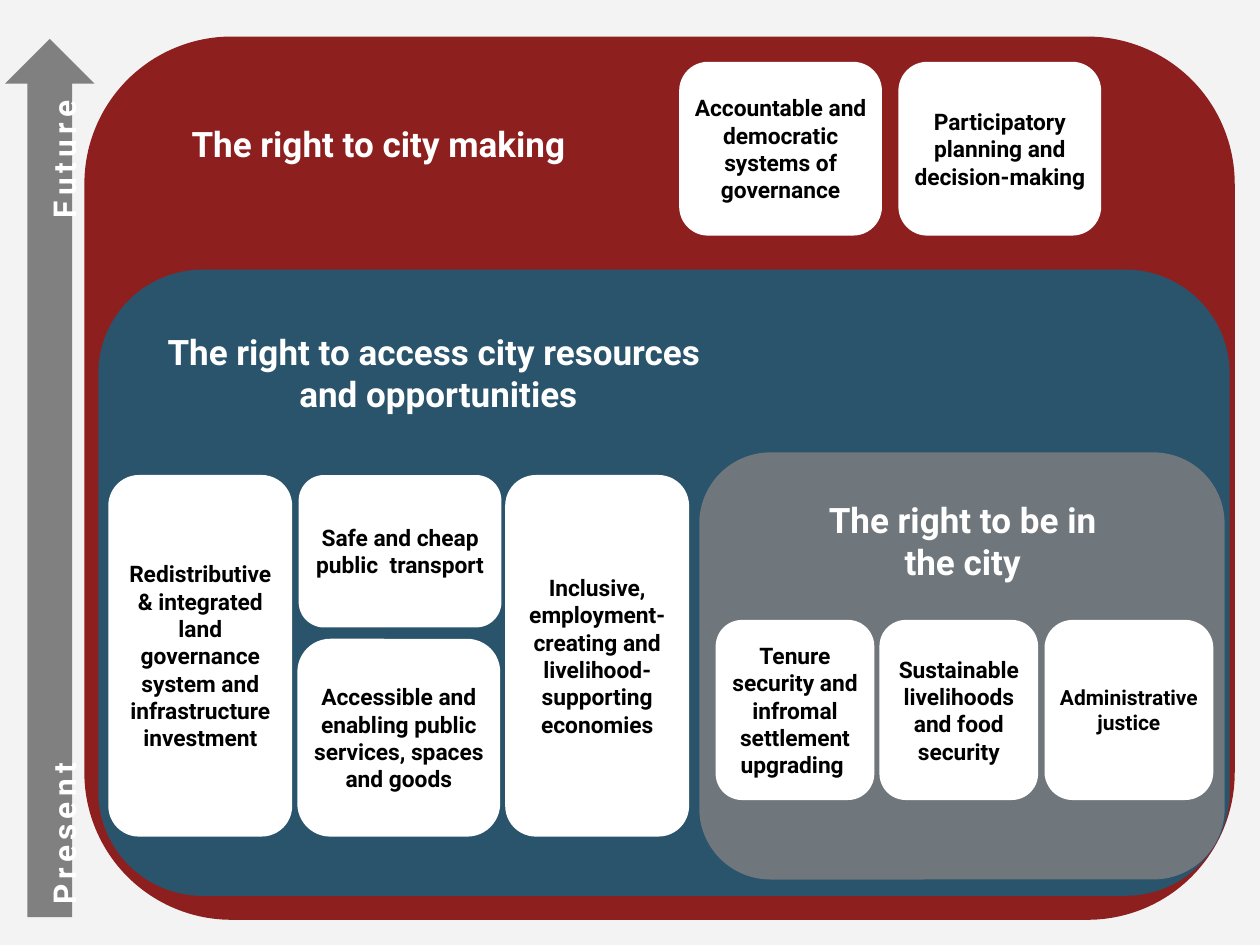
from lxml import etree
from pptx import Presentation
from pptx.dml.color import RGBColor
from pptx.enum.shapes import MSO_SHAPE
from pptx.enum.text import MSO_ANCHOR, PP_ALIGN
from pptx.oxml.ns import qn
from pptx.util import Inches, Pt

WHITE, BLACK, GREY = "FFFFFF", "000000", "808080"
FONT = "Roboto"

# left, top, width, height, colour, opacity in percent
ZONES = [
    (0.67, 0.29, 9.13, 7.01, "800000", 87),
    (0.78, 2.14, 8.98, 4.97, "2A536C", 100),
    (5.55, 3.59, 4.17, 3.39, GREY, 82),
]

MAKING_TOP, ACCESS_TOP, BEING_TOP = 0.49, 3.77, 4.92
# left, top, width, height, text
CARDS = [
    (5.39, MAKING_TOP, 1.61, 1.38, "Accountable and democratic systems of governance"),
    (7.13, MAKING_TOP, 1.61, 1.38, "Participatory planning and decision-making"),
    (0.86, ACCESS_TOP, 1.46, 2.87,
     "Redistributive\v& integrated land governance system and infrastructure investment"),
    (2.37, ACCESS_TOP, 1.61, 1.21, "Safe and cheap public  transport"),
    (2.36, 5.07, 1.61, 1.57, "Accessible and enabling public services, spaces and goods"),
    (4.01, ACCESS_TOP, 1.46, 2.87,
     "Inclusive, employment-creating and livelihood-supporting economies"),
    (5.68, BEING_TOP, 1.26, 1.43, "Tenure security and infromal settlement upgrading "),
    (6.98, BEING_TOP, 1.26, 1.43, "Sustainable livelihoods and food security"),
]
JUSTICE = (8.29, BEING_TOP, 1.34, 1.43, "Administrative justice")

HEADINGS = [
    (1, 2.57, 4.96, 0.77, "The right to access city resources \nand opportunities"),
    (6.38, 3.91, 2.52, 0.77, "The right to be in the city"),
]


def color(value):
    return RGBColor.from_string(value)


def apply(target, formats):
    for name, value in formats.items():
        setattr(target, name, value)


def place(box, left, top, width, height):
    apply(box, {"left": Inches(left), "top": Inches(top),
                "width": Inches(width), "height": Inches(height)})


def write(box, text, size, ink, align=PP_ALIGN.CENTER, anchor=MSO_ANCHOR.MIDDLE,
          side=0.1):
    frame = box.text_frame
    frame.text = text
    apply(frame, {"word_wrap": True, "vertical_anchor": anchor,
                  "margin_left": Inches(side), "margin_right": Inches(side),
                  "margin_top": Inches(0.05), "margin_bottom": Inches(0.05)})
    for para in frame.paragraphs:
        para.alignment = align
        for span in para.runs:
            apply(span.font, {"name": FONT, "size": Pt(size), "bold": True})
            span.font.color.rgb = color(ink)


def add_block(page, kind, bounds, fill, opacity=100):
    block = page.shapes.add_shape(kind, *map(Inches, bounds))
    block.shadow.inherit = False
    block.line.fill.background()
    block.fill.solid()
    block.fill.fore_color.rgb = color(fill)
    if opacity < 100:
        tint = block.fill._xPr.find(".//" + qn("a:srgbClr"))
        etree.SubElement(tint, qn("a:alpha"), val=str(opacity * 1000))
    return block


def add_card(page, *bounds, text, size=13, side=0.04):
    card = add_block(page, MSO_SHAPE.ROUNDED_RECTANGLE, bounds, WHITE)
    write(card, text, size, BLACK, side=side)


def add_heading(page, *bounds, text):
    heading = page.shapes.add_textbox(*map(Inches, bounds))
    write(heading, text, 20, WHITE, anchor=MSO_ANCHOR.TOP)


def add_time_arrow(page):
    """Upward arrow with rotated labels, the second one set by a tab stop."""
    arrow = add_block(page, MSO_SHAPE.UP_ARROW, (0.04, 0.31, 0.71, 6.97), GREY)
    write(arrow, "Present\tFuture", 18, WHITE, PP_ALIGN.LEFT, side=0.22)
    frame = arrow.text_frame
    frame.margin_right = 0
    frame._txBody.bodyPr.set("vert", "vert270")
    para = frame.paragraphs[0]
    stops = etree.SubElement(para._p.get_or_add_pPr(), qn("a:tabLst"))
    etree.SubElement(stops, qn("a:tab"), pos=str(Inches(5.45)), algn="l")
    for span in para.runs:
        span._r.get_or_add_rPr().set("spc", "300")


def set_title(page):
    title = page.shapes.title
    place(title, 1.42, 0.92, 3.52, 0.44)
    write(title, "The right to city making", 20, WHITE, PP_ALIGN.LEFT, MSO_ANCHOR.TOP)
    # Bring the title in front of the coloured zones.
    title.element.getparent().append(title.element)


def main():
    deck = Presentation()
    apply(deck, {"slide_width": Inches(10), "slide_height": Inches(7.5)})
    page = deck.slides.add_slide(deck.slide_layouts[5])
    page.background.fill.solid()
    page.background.fill.fore_color.rgb = color("F3F3F3")

    add_time_arrow(page)
    for *bounds, fill, opacity in ZONES:
        add_block(page, MSO_SHAPE.ROUNDED_RECTANGLE, bounds, fill, opacity)
    set_title(page)
    for *bounds, text in HEADINGS:
        add_heading(page, *bounds, text=text)
    for *bounds, text in CARDS:
        add_card(page, *bounds, text=text)
    *bounds, text = JUSTICE
    add_card(page, *bounds, text=text, size=12, side=0)

    deck.save("out.pptx")


if __name__ == "__main__":
    main()
